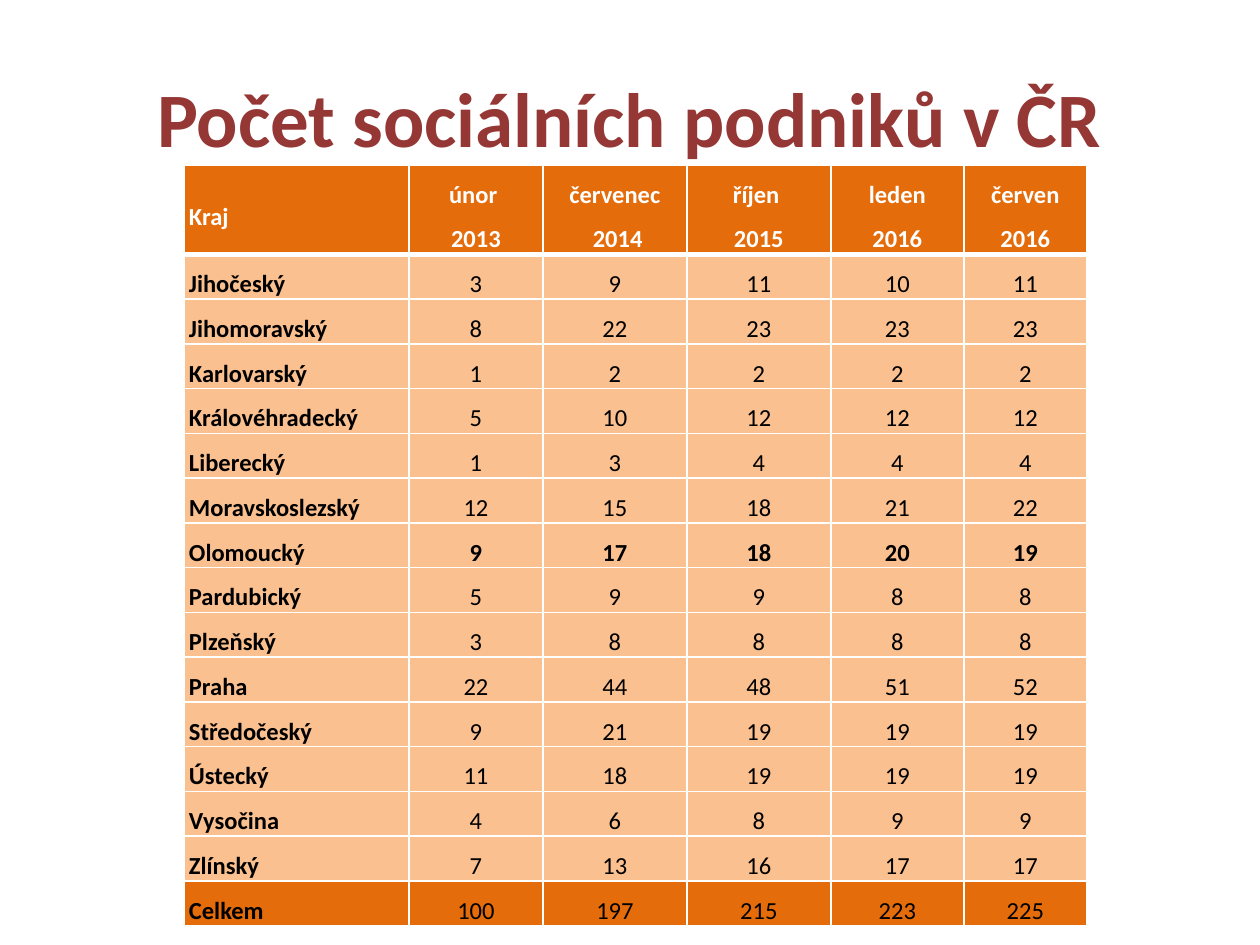
from lxml.etree import SubElement
from pptx import Presentation
from pptx.dml.color import RGBColor
from pptx.enum.text import MSO_ANCHOR, PP_ALIGN
from pptx.oxml.ns import qn
from pptx.util import Emu, Pt

PX = 914400 / 126
C = {"title": "953735", "dark": "E46C0A", "light": "FAC090",
     "white": "FFFFFF", "black": "000000"}


def px(n):
    return Emu(round(n * PX))


def write(tf, text, size=14, color="black", bold=False, align=PP_ALIGN.CENTER, spacing=None):
    for i, line in enumerate(text.split("\n")):
        p = tf.paragraphs[0] if i == 0 else tf.add_paragraph()
        p.alignment = align
        p.line_spacing = spacing
        r = p.add_run()
        r.text = line
        r.font.name = "Calibri"
        r.font.size = Pt(size)
        r.font.bold = bold
        r.font.color.rgb = RGBColor.from_string(C[color])


prs = Presentation()
prs.slide_width, prs.slide_height = px(1260), px(945)
s = prs.slides.add_slide(prs.slide_layouts[5])

# Title
title = s.shapes.title
title.left, title.top, title.width, title.height = px(63), px(38), px(1134), px(157)
title.text_frame.vertical_anchor = MSO_ANCHOR.MIDDLE
write(title.text_frame, "Počet sociálních podniků v ČR", size=44, color="title", bold=True)

# Table data
rows = [
    ("Kraj", "únor \n2013", "červenec\n 2014", "říjen \n2015", "leden\n2016", "červen\n2016"),
    ("Jihočeský", 3, 9, 11, 10, 11),
    ("Jihomoravský", 8, 22, 23, 23, 23),
    ("Karlovarský", 1, 2, 2, 2, 2),
    ("Královéhradecký", 5, 10, 12, 12, 12),
    ("Liberecký", 1, 3, 4, 4, 4),
    ("Moravskoslezský", 12, 15, 18, 21, 22),
    ("Olomoucký", 9, 17, 18, 20, 19),
    ("Pardubický", 5, 9, 9, 8, 8),
    ("Plzeňský", 3, 8, 8, 8, 8),
    ("Praha", 22, 44, 48, 51, 52),
    ("Středočeský", 9, 21, 19, 19, 19),
    ("Ústecký", 11, 18, 19, 19, 19),
    ("Vysočina", 4, 6, 8, 9, 9),
    ("Zlínský", 7, 13, 16, 17, 17),
    ("Celkem", 100, 197, 215, 223, 225),
]
widths = [225, 134, 144, 144, 133, 123]
heights = [82] + [42] * (len(rows) - 1)

# Table grid
table = s.shapes.add_table(len(rows), len(widths), px(184), px(165),
                           px(sum(widths)), px(sum(heights))).table
for col, w in zip(table.columns, widths):
    col.width = px(w)
for row, h in zip(table.rows, heights):
    row.height = px(h)

# Cells
for i, row in enumerate(rows):
    header = i == 0
    for j, value in enumerate(row):
        cell = table.cell(i, j)
        cell.margin_left = cell.margin_right = px(5)
        cell.margin_top = cell.margin_bottom = 0
        cell.vertical_anchor = MSO_ANCHOR.MIDDLE if j < 4 else MSO_ANCHOR.TOP
        write(cell.text_frame, str(value), color="white" if header else "black",
              bold=header or j == 0 or row[0] == "Olomoucký",
              align=PP_ALIGN.LEFT if j == 0 else PP_ALIGN.CENTER, spacing=1.5)

        # White borders, thicker under the header
        for side in "LRTB":
            thick = (i, side) in ((0, "B"), (1, "T"))
            ln = SubElement(cell._tc.get_or_add_tcPr(), qn(f"a:ln{side}"),
                            w=str(Pt(3 if thick else 1)))
            fill = SubElement(ln, qn("a:solidFill"))
            SubElement(fill, qn("a:srgbClr"), val=C["white"])
        cell.fill.solid()
        shade = "dark" if header or row[0] == "Celkem" else "light"
        cell.fill.fore_color.rgb = RGBColor.from_string(C[shade])

prs.save("out.pptx")
